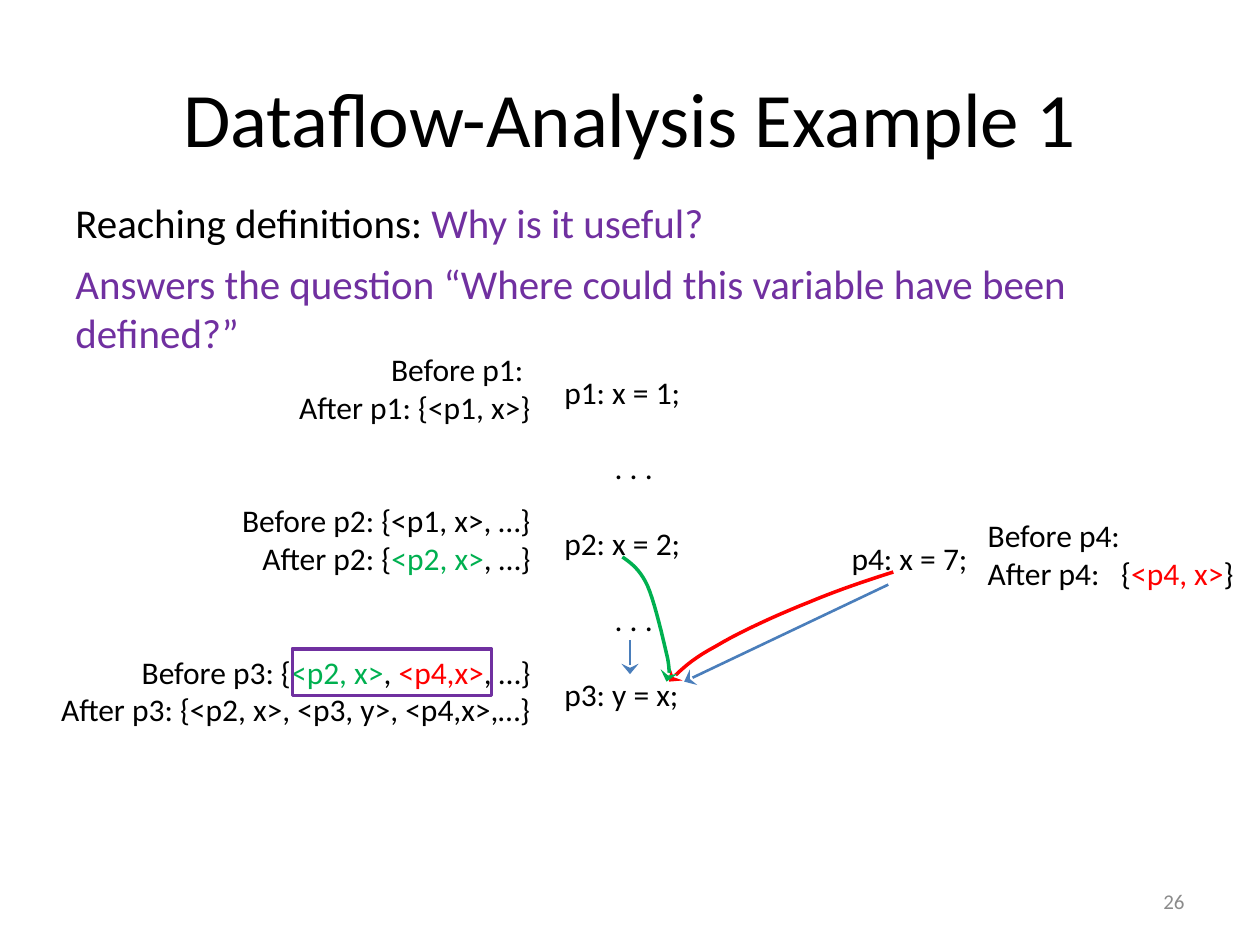
from lxml.etree import SubElement
from pptx import Presentation
from pptx.dml.color import RGBColor
from pptx.enum.shapes import MSO_CONNECTOR, MSO_SHAPE
from pptx.enum.text import MSO_ANCHOR, PP_ALIGN
from pptx.oxml.ns import qn
from pptx.util import Inches, Pt

BLACK = RGBColor(0x00, 0x00, 0x00)
GREY = RGBColor(0x8B, 0x8B, 0x8B)
PURPLE = RGBColor(0x70, 0x30, 0xA0)
GREEN = RGBColor(0x00, 0xB0, 0x50)
RED = RGBColor(0xFF, 0x00, 0x00)
BLUE = RGBColor(0x4A, 0x7E, 0xBB)

CODE = 18          # point size of program text
LINE = 21.6        # height of one line of it, in points
RIGHT = PP_ALIGN.RIGHT

prs = Presentation()
prs.slide_width, prs.slide_height = Inches(10), Inches(7.5)
s = prs.slides.add_slide(prs.slide_layouts[6])


def add_text(box, paragraphs, size=CODE, color=BLACK, wrap=False, anchor=MSO_ANCHOR.TOP):
    """Each paragraph is (runs, formats); a run is a string or (string, colour)."""
    tf = s.shapes.add_textbox(*map(Inches, box)).text_frame
    tf.word_wrap, tf.vertical_anchor = wrap, anchor
    for i, (runs, formats) in enumerate(paragraphs):
        p = tf.paragraphs[0] if i == 0 else tf.add_paragraph()
        for name, value in formats.items():
            setattr(p, name, value)
        for run in runs:
            words, run_color = (run, color) if isinstance(run, str) else run
            r = p.add_run()
            r.text = words
            r.font.name, r.font.size = "Calibri", Pt(size)
            r.font.color.rgb = run_color
    return tf


def style_arrow(sp, color, width):
    sp.line.color.rgb, sp.line.width = color, Pt(width)
    SubElement(sp.line._get_or_add_ln(), qn("a:tailEnd"), type="stealth", w="lg", len="med")
    SubElement(sp._element.spPr, qn("a:effectLst"))


# Slide number, title and question
add_text((7.17, 6.95, 2.33, 0.4), [(["26"], {"alignment": RIGHT})],
         size=12, color=GREY, wrap=True, anchor=MSO_ANCHOR.MIDDLE)
add_text((0.5, 0.3, 9, 1.25),
         [(["Dataflow-Analysis Example 1"], {"alignment": PP_ALIGN.CENTER})],
         size=44, wrap=True, anchor=MSO_ANCHOR.MIDDLE)
spaced = {"space_before": Pt(6.4)}
add_text((0.5, 1.52, 8.35, 1.34), [
    ([("Reaching definitions: ", BLACK), "Why is it useful?"], spaced),
    (["Answers the question “Where could this variable have been defined?”"], spaced),
], size=23.4, color=PURPLE, wrap=True)

# Program statements, one blank line apart
statements = ["p1: x = 1;", ". . .", "p2: x = 2;", ". . .", "p3: y = x;"]
tf = add_text((4.38, 2.91, 1.12, 2.8),
              [([words], {"space_before": Pt(LINE if i else 0)})
               for i, words in enumerate(statements)])
for p in tf.paragraphs[1::2]:
    p._p.get_or_add_pPr().set("marL", str(Inches(0.4)))

# Facts before and after each statement, two blank lines between pairs
facts = [
    (["Before p1: "], ["After p1: {<p1, x>}"]),
    (["Before p2: {<p1, x>, …}"], ["After p2: {", ("<p2, x>", GREEN), ", …}"]),
    (["Before p3: {", ("<p2, x>", GREEN), ", ", ("<p4,x>", RED), ", …}"],
     ["After p3: {<p2, x>, <p3, y>, <p4,x>,…}"]),
]
add_text((0.38, 2.73, 3.93, 3.1),
         [(runs, {"alignment": RIGHT,
                  "space_before": Pt(2 * LINE if i and not j else 0)})
          for i, pair in enumerate(facts) for j, runs in enumerate(pair)])

# The second branch
add_text((6.66, 4.23, 1.12, 0.4), [(["p4: x = 7;"], {})])
tf = add_text((7.74, 4.05, 2.15, 0.7), [
    (["Before p4:"], {}),
    (["After p4:\t{", ("<p4, x>", RED), "}"], {}),
])
tabs = SubElement(tf.paragraphs[1]._p.get_or_add_pPr(), qn("a:tabLst"))
SubElement(tabs, qn("a:tab"), pos=str(Inches(1.06)), algn="l")

# Control flow into p3
for ends in [(7.05, 4.64, 5.43, 5.41), (5, 5.08, 5, 5.35)]:
    style_arrow(s.shapes.add_connector(MSO_CONNECTOR.STRAIGHT, *map(Inches, ends)),
                BLUE, 1.5)

# Definitions reaching p3: chains of cubic Bézier pieces, three points each after the start
reaching = [
    (RED, [(7.09, 4.54), (6.87, 4.61), (6.66, 4.68), (6.42, 4.78), (6.19, 4.87),
           (5.86, 5.02), (5.68, 5.13), (5.49, 5.23), (5.4, 5.32), (5.31, 5.41)]),
    (GREEN, [(4.94, 4.42), (5.01, 4.47), (5.08, 4.52), (5.14, 4.65), (5.2, 4.79),
             (5.27, 5.1), (5.3, 5.23), (5.32, 5.35), (5.31, 5.38), (5.29, 5.41)]),
]
STEPS = 10
for color, points in reaching:
    curve = []
    for k in range(0, len(points) - 1, 3):
        for t in (n / STEPS for n in range(1, STEPS + 1)):
            weights = ((1 - t) ** 3, 3 * t * (1 - t) ** 2, 3 * t * t * (1 - t), t ** 3)
            curve.append(tuple(Inches(sum(w * c for w, c in zip(weights, axis)))
                               for axis in zip(*points[k:k + 4])))
    builder = s.shapes.build_freeform(*map(Inches, points[0]))
    builder.add_line_segments(curve, close=False)
    sp = builder.convert_to_shape()
    sp.fill.background()
    style_arrow(sp, color, 2)

# Frame around the definitions that reach p3
sp = s.shapes.add_shape(MSO_SHAPE.RECTANGLE, *map(Inches, (2.32, 5.15, 1.58, 0.37)))
sp.shadow.inherit = False
sp.fill.background()
sp.line.color.rgb, sp.line.width = PURPLE, Pt(2)

prs.save("out.pptx")
